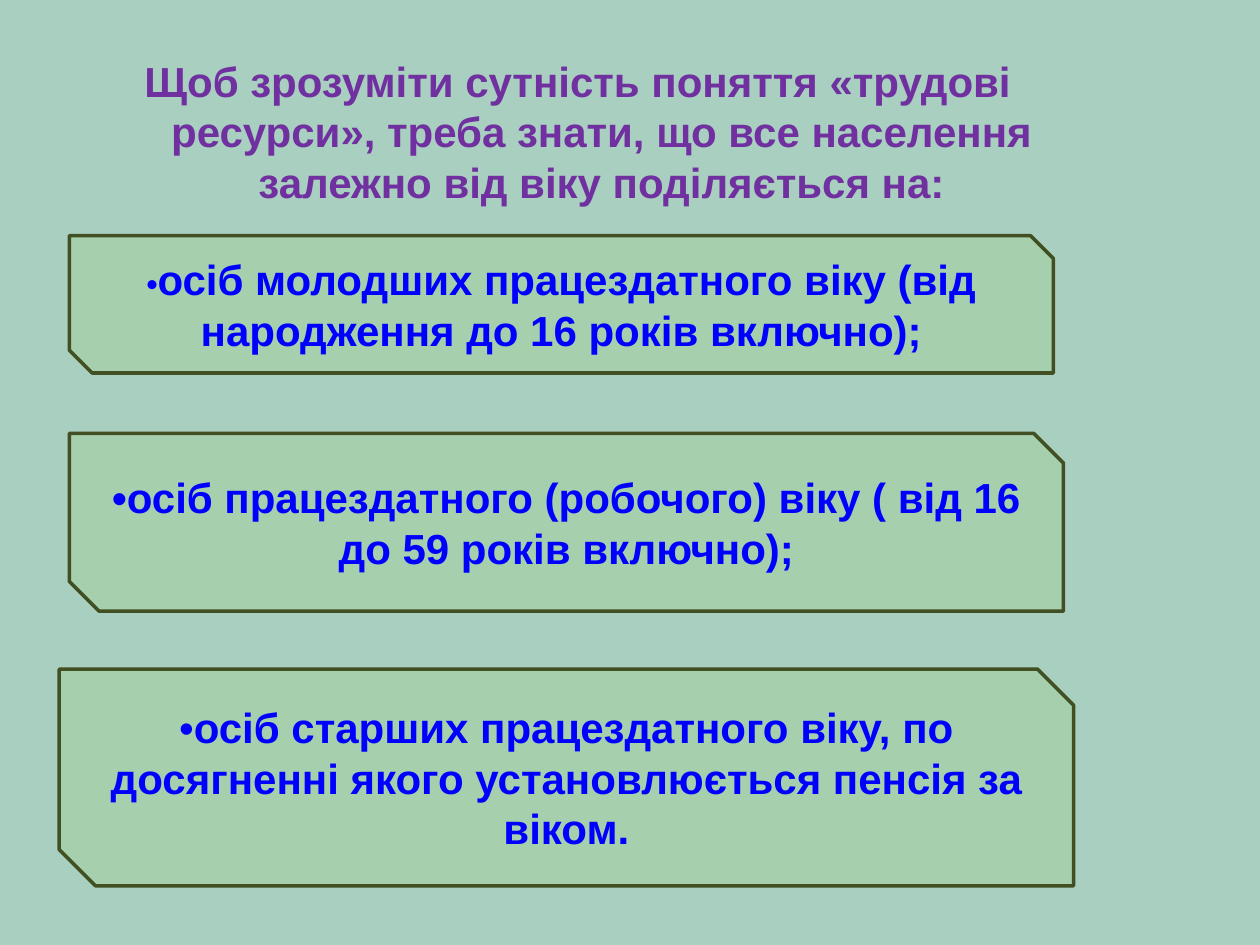
import dataclasses

import pptx
import pptx.dml.color
import pptx.enum.shapes
import pptx.enum.text
import pptx.oxml
import pptx.oxml.ns
import pptx.util

UNIT = pptx.util.Inches(0.1)
COLS, ROWS = 100, 75
FONT = {"name": "Arial", "size": pptx.util.Pt(24), "bold": True}
CENTER = pptx.enum.text.PP_ALIGN.CENTER


@dataclasses.dataclass
class Area:
    col: float
    row: float
    cols: float
    rows: float


@dataclasses.dataclass
class AgeGroup:
    area: Area
    text: str
    bullet: dict


GROUPS = [
    AgeGroup(Area(5.5, 18.7, 78.1, 10.9),
             "осіб молодших працездатного віку (від народження до 16 років включно);",
             {"size": pptx.util.Pt(18)}),
    AgeGroup(Area(5.5, 34.4, 78.9, 14.1),
             "осіб працездатного (робочого) віку ( від 16 до 59 років включно);",
             {}),
    AgeGroup(Area(4.7, 53.1, 80.5, 17.2),
             "осіб старших працездатного віку, по досягненні якого установлюється пенсія за віком.",
             {"bold": False}),
]


def rgb(value: str) -> pptx.dml.color.RGBColor:
    return pptx.dml.color.RGBColor.from_string(value)


def box(area: Area) -> list[int]:
    return [round(v * UNIT) for v in dataclasses.astuple(area)]


def add_run(p, text: str, color: str, **changes) -> None:
    r = p.add_run()
    r.text = text
    for name, value in {**FONT, **changes}.items():
        setattr(r.font, name, value)
    r.font.color.rgb = rgb(color)


def draw_intro(sp, area: Area, text: str) -> None:
    sp.left, sp.top, sp.width, sp.height = box(area)
    tf = sp.text_frame
    tf.auto_size = pptx.enum.text.MSO_AUTO_SIZE.NONE
    p = tf.paragraphs[0]
    p.alignment = CENTER
    pPr = p._p.get_or_add_pPr()
    indent = pptx.util.Inches(0.38)
    pPr.set("marL", str(indent))
    pPr.set("indent", str(-indent))
    pptx.oxml.ns.qn("a:buNone")
    pPr.append(pptx.oxml.parse_xml(f"<a:buNone {pptx.oxml.ns.nsdecls('a')}/>"))
    add_run(p, text, "7030A0")


def draw_group(s, group: AgeGroup) -> None:
    sp = s.shapes.add_shape(
        pptx.enum.shapes.MSO_SHAPE.SNIP_2_DIAG_RECTANGLE, *box(group.area))
    sp.shadow.inherit = False
    sp.fill.solid()
    sp.fill.fore_color.rgb = rgb("92D050")
    color = sp._element.spPr.find(".//" + pptx.oxml.ns.qn("a:srgbClr"))
    color.append(pptx.oxml.parse_xml(
        f"<a:alpha {pptx.oxml.ns.nsdecls('a')} val='17000'/>"))
    sp.line.color.rgb = rgb("424F22")
    sp.line.width = pptx.util.Pt(2)
    tf = sp.text_frame
    tf.word_wrap = True
    tf.vertical_anchor = pptx.enum.text.MSO_ANCHOR.MIDDLE
    p = tf.paragraphs[0]
    p.alignment = CENTER
    add_run(p, "•", "0000FF", **group.bullet)
    add_run(p, group.text, "0000FF")


def main() -> None:
    prs = pptx.Presentation()
    prs.slide_width, prs.slide_height = COLS * UNIT, ROWS * UNIT
    s = prs.slides.add_slide(prs.slide_layouts[1])
    s.background.fill.solid()
    s.background.fill.fore_color.rgb = rgb("A9CFC0")
    title = s.shapes.title._element
    title.getparent().remove(title)
    draw_intro(s.placeholders[1], Area(5, 3.9, 81.7, 13.3),
               "Щоб зрозуміти сутність поняття «трудові ресурси», треба знати, "
               "що все населення залежно від віку поділяється на:")
    for group in GROUPS:
        draw_group(s, group)
    prs.save("out.pptx")


if __name__ == "__main__":
    main()
